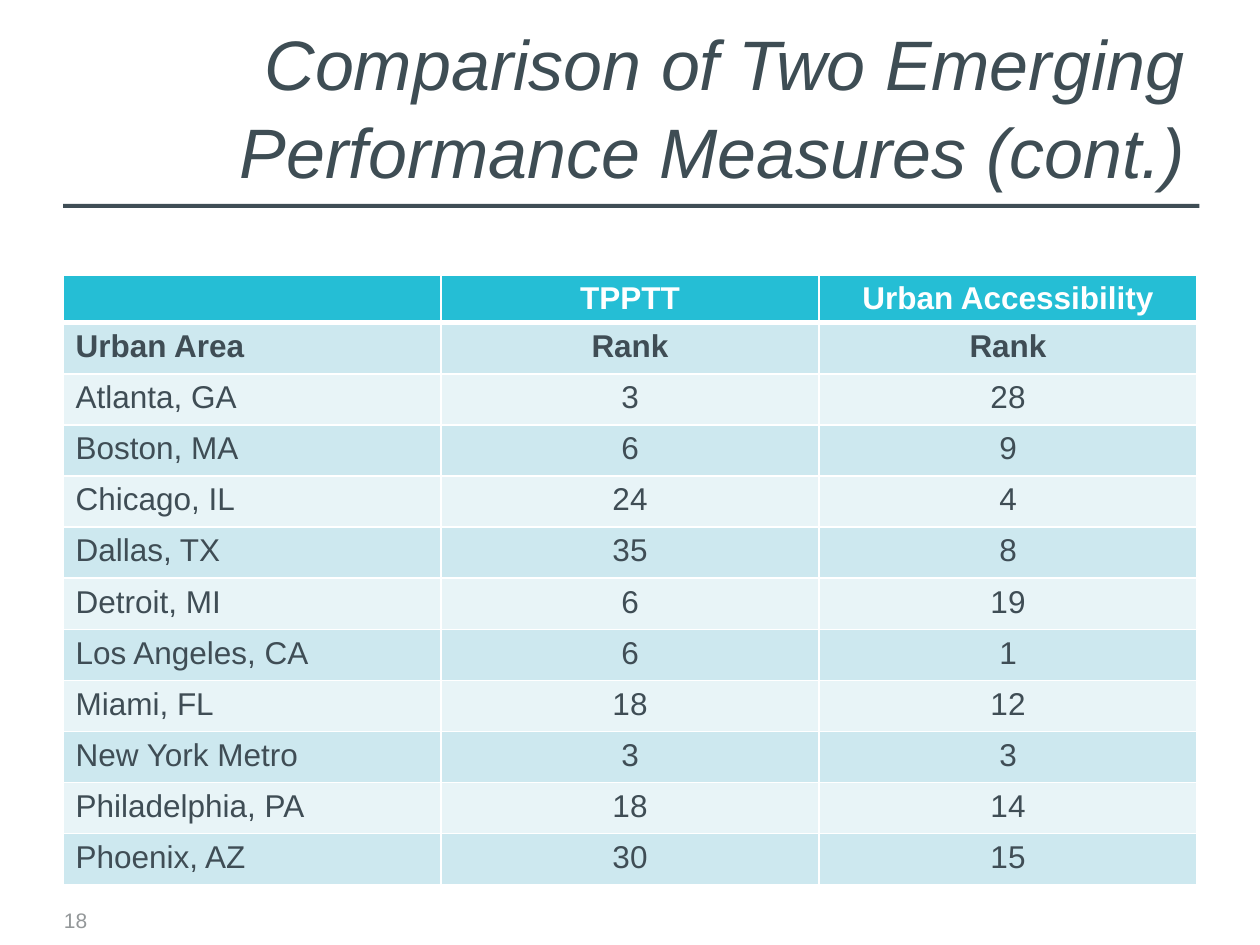
from lxml.etree import SubElement
from pptx import Presentation
from pptx.dml.color import RGBColor
from pptx.enum.shapes import MSO_SHAPE
from pptx.enum.text import MSO_ANCHOR, PP_ALIGN
from pptx.oxml.ns import qn
from pptx.util import Pt

TITLE = "Comparison of Two Emerging Performance Measures (cont.)"
PAGE = "18"
ROWS = [
    ("", "TPPTT", "Urban Accessibility"),
    ("Urban Area", "Rank", "Rank"),
    ("Atlanta, GA", "3", "28"),
    ("Boston, MA", "6", "9"),
    ("Chicago, IL", "24", "4"),
    ("Dallas, TX", "35", "8"),
    ("Detroit, MI", "6", "19"),
    ("Los Angeles, CA", "6", "1"),
    ("Miami, FL", "18", "12"),
    ("New York Metro", "3", "3"),
    ("Philadelphia, PA", "18", "14"),
    ("Phoenix, AZ", "30", "15"),
]
SLATE, WHITE = "3F4D55", "FFFFFF"
HEADER_FILL, BANDS = "25BED5", ("E8F4F7", "CDE8EF")
LEFT, WIDTH = 36, 648
HEADER_H, ROW_H = 27, 29.2


def paint(color_format, hex_color):
    color_format.rgb = RGBColor.from_string(hex_color)


def fill(target, hex_color):
    target.fill.solid()
    paint(target.fill.fore_color, hex_color)


def style(p, size, color, bold=False, italic=False, align=PP_ALIGN.LEFT):
    p.alignment = align
    font = p.font
    font.name, font.size, font.bold, font.italic = "Arial", Pt(size), bold, italic
    paint(font.color, color)


def add_borders(cell, widths):
    """Draw white borders; they must come before the fill in the cell XML."""
    tc_pr = cell._tc.get_or_add_tcPr()
    for side, width in widths.items():
        ln = SubElement(tc_pr, qn(f"a:ln{side}"), w=str(Pt(width)))
        solid = SubElement(ln, qn("a:solidFill"))
        SubElement(solid, qn("a:srgbClr"), val=WHITE)


prs = Presentation()
prs.slide_width, prs.slide_height = Pt(720), Pt(540)
s = prs.slides.add_slide(prs.slide_layouts[5])

# Title and the rule below it
title = s.shapes.title
title.left, title.top, title.width, title.height = Pt(LEFT), Pt(-0.7), Pt(WIDTH), Pt(114.5)
tf = title.text_frame
tf.text = TITLE
tf.word_wrap = True
tf.vertical_anchor = MSO_ANCHOR.BOTTOM
p = tf.paragraphs[0]
style(p, 40, "3E4D54", italic=True, align=PP_ALIGN.RIGHT)
p.line_spacing = 1.05

rule = s.shapes.add_shape(MSO_SHAPE.RECTANGLE, Pt(LEFT), Pt(116.6), Pt(649.4), Pt(2.2))
rule.shadow.inherit = False
fill(rule, SLATE)
rule.line.fill.background()

# Ranking table
table_h = HEADER_H + ROW_H * (len(ROWS) - 1)
table = s.shapes.add_table(len(ROWS), 3, Pt(LEFT), Pt(157), Pt(WIDTH), Pt(table_h)).table
for column in table.columns:
    column.width = Pt(WIDTH / 3)
for r, values in enumerate(ROWS):
    header = r == 0
    table.rows[r].height = Pt(HEADER_H if header else ROW_H)
    widths = {"L": 1, "R": 1, "T": 3 if r == 1 else 1, "B": 3 if header else 1}
    for c, value in enumerate(values):
        cell = table.cell(r, c)
        cell.text = value
        style(cell.text_frame.paragraphs[0], 18, WHITE if header else SLATE,
              bold=r < 2, align=PP_ALIGN.CENTER if c else PP_ALIGN.LEFT)
        add_borders(cell, widths)
        fill(cell, HEADER_FILL if header else BANDS[r % 2])

# Page number
sp = s.shapes.add_textbox(Pt(29.5), Pt(511.2), Pt(52.6), Pt(28.8))
tf = sp.text_frame
tf.word_wrap = True
tf.vertical_anchor = MSO_ANCHOR.MIDDLE
tf.text = PAGE
style(tf.paragraphs[0], 12, "939799")

prs.save("out.pptx")
